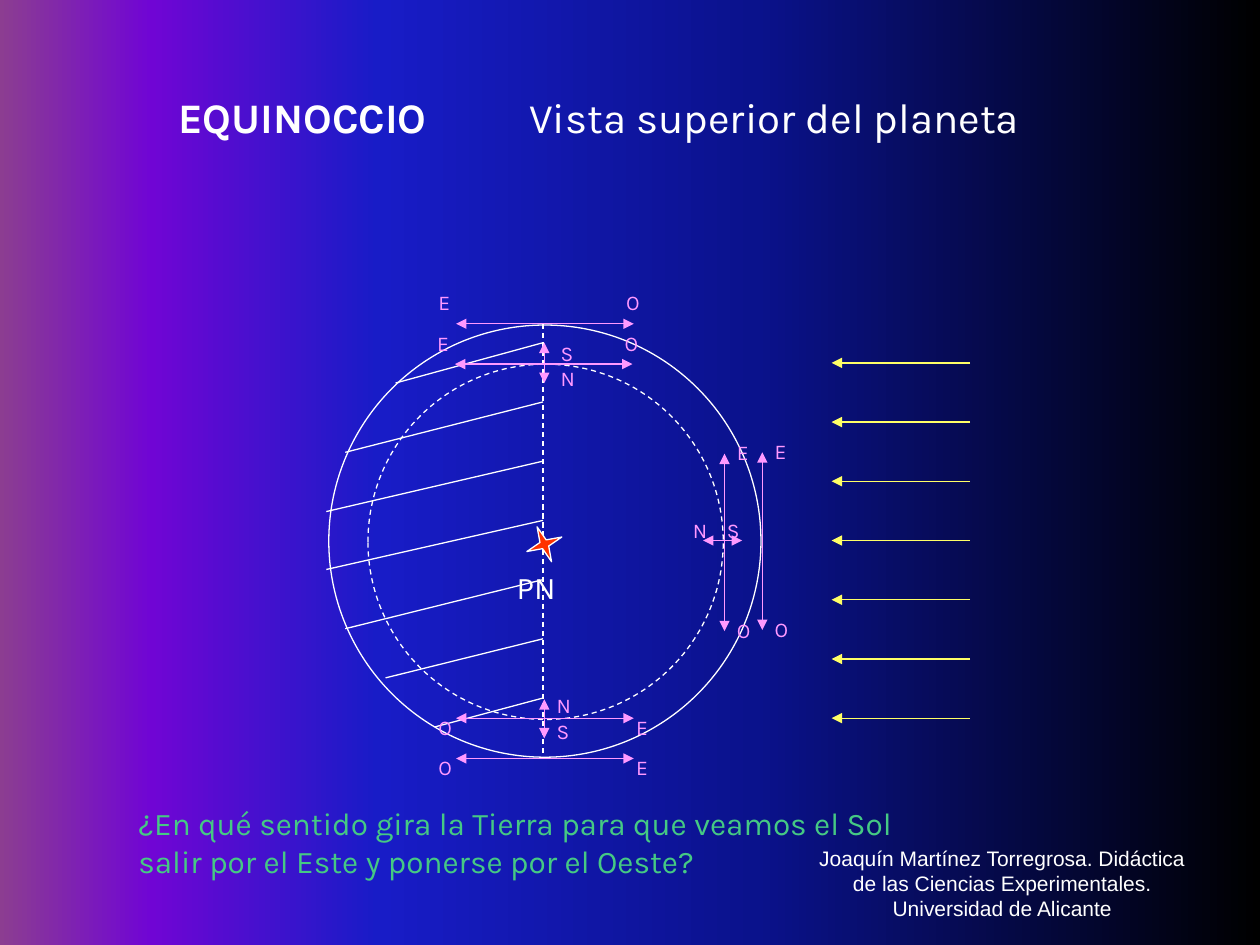
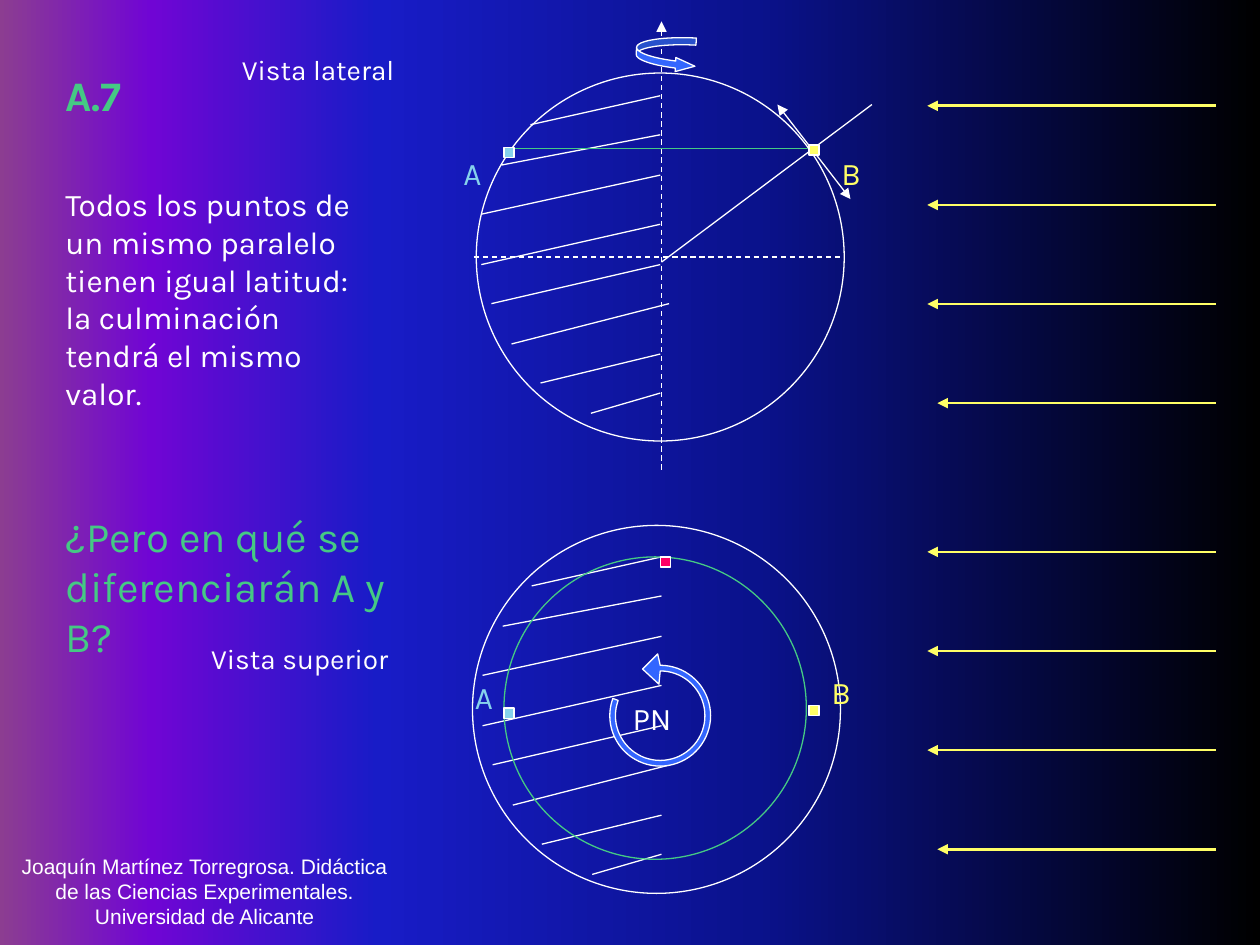
from math import cos, radians, sin

from lxml import etree
from pptx import Presentation
from pptx.dml.color import RGBColor
from pptx.enum.dml import MSO_LINE
from pptx.enum.shapes import MSO_CONNECTOR, MSO_SHAPE
from pptx.enum.text import MSO_ANCHOR, MSO_AUTO_SIZE, PP_ALIGN
from pptx.oxml.ns import qn
from pptx.util import Inches, Pt

LEFT, CENTER = PP_ALIGN.LEFT, PP_ALIGN.CENTER
TOP, BOTTOM = MSO_ANCHOR.TOP, MSO_ANCHOR.BOTTOM
OVAL, SQUARE = MSO_SHAPE.OVAL, MSO_SHAPE.RECTANGLE
STAR, CURVED_ARROW = MSO_SHAPE.STAR_4_POINT, MSO_SHAPE.CURVED_RIGHT_ARROW
STRAIGHT, DASH = MSO_CONNECTOR.STRAIGHT, MSO_LINE.DASH
NO_AUTOFIT = MSO_AUTO_SIZE.NONE

WHITE, YELLOW, PINK, GREEN = "FFFFFF", "FFFF66", "FF99FF", "45C984"
SKY, BLUE, RED, CRIMSON = "86D1EC", "3366FF", "FF3300", "FF0066"
SKY_STOPS = [(0, "000000"), (40, "0A128C"), (70, "181CC7"),
             (88, "7005D4"), (100, "8C3D91")]
CREDIT = ("Joaquín Martínez Torregrosa. Didáctica de las Ciencias "
          "Experimentales. Universidad de Alicante")

# Each mark is a letter and its offset from the start of the compass line.
MARKS_NOON_SIDE = [("E", 0, -0.16), ("O", 0, 1.25)]
MARKS_UPPER = [("E", -0.24, -0.32), ("O", 1.25, -0.32)]
MARKS_LOWER = [("O", -0.24, -0.08), ("E", 1.33, -0.08)]

# Each stroke is start x, start y, reach to the left and drop.
EQUINOX_STROKES = [
    (0, 0.47 * row, reach, drop) for row, (reach, drop) in enumerate(
        [(1.17, 0.32), (1.57, 0.4), (1.72, 0.4), (1.72, 0.39),
         (1.57, 0.39), (1.25, 0.31), (0.86, 0.23)])]
NIGHT_STROKES = [
    (0, 0, 1.03, 0.23), (0, 0.31, 1.26, 0.24), (0, 0.63, 1.42, 0.31),
    (0, 1.02, 1.42, 0.32), (0, 1.34, 1.34, 0.31), (0.07, 1.65, 1.25, 0.32),
    (0, 2.05, 0.95, 0.23), (0, 2.36, 0.55, 0.16)]


def rgb(value):
    return RGBColor.from_string(value)


def inches(values):
    return [Inches(value) for value in values]


def paint_background(master):
    """Give every slide the horizontal night-to-dawn gradient."""
    fill = master.background.fill
    fill.gradient()
    fill.gradient_angle = 180
    stops = master.element.find(".//" + qn("a:gsLst"))
    for stop in list(stops):
        stops.remove(stop)
    for position, color in SKY_STOPS:
        stop = etree.SubElement(stops, qn("a:gs"), pos=str(position * 1000))
        etree.SubElement(stop, qn("a:srgbClr"), val=color)


def write(shape, text, color, size, bold=False, font="Karla", align=LEFT,
          anchor=TOP, insets=(0.1, 0.05)):
    frame = shape.text_frame
    side, edge = inches(insets)
    frame_format = dict(word_wrap=True, auto_size=NO_AUTOFIT,
                        vertical_anchor=anchor, margin_left=side,
                        margin_right=side, margin_top=edge,
                        margin_bottom=edge, text=text)
    for name, value in frame_format.items():
        setattr(frame, name, value)
    paragraph = frame.paragraphs[0]
    paragraph.alignment = align
    run_font = paragraph.runs[0].font
    for name, value in dict(name=font, size=Pt(size), bold=bold).items():
        setattr(run_font, name, value)
    run_font.color.rgb = rgb(color)


def add_text(slide, box, text, color, size, **formats):
    write(slide.shapes.add_textbox(*inches(box)), text, color, size, **formats)


def add_title(slide, box, text, color, align):
    title = slide.shapes.title
    for name, value in zip(("left", "top", "width", "height"), inches(box)):
        setattr(title, name, value)
    write(title, text, color, 24, bold=True, align=align)


def add_credit(slide, x, y):
    add_text(slide, (x, y, 3.17, 0.5), CREDIT, WHITE, 12, font="Arial",
             align=CENTER, anchor=BOTTOM)


def add_pole_label(slide, x, y):
    add_text(slide, (x, y, 0.42, 0.32), "PN", WHITE, 18, insets=(0.02, 0.01))


def style(shape, fill=None, line=WHITE, dash=None):
    shape.shadow.inherit = False
    if fill:
        shape.fill.solid()
        shape.fill.fore_color.rgb = rgb(fill)
    else:
        shape.fill.background()
    shape.line.color.rgb = rgb(line)
    shape.line.width = Pt(0.75)
    shape.line.dash_style = dash


def add_figure(slide, kind, box, rotation=0, adjustments=(), **formats):
    figure = slide.shapes.add_shape(kind, *inches(box))
    figure.rotation = rotation
    for index, value in enumerate(adjustments):
        figure.adjustments[index] = value
    style(figure, **formats)


def add_circle(slide, x, y, size, **formats):
    add_figure(slide, OVAL, (x, y, size, size), **formats)


def add_line(slide, start, end, color=WHITE, width=0.75, dash=None, arrows=()):
    """Arrows may hold headEnd (at the start) and tailEnd (at the end)."""
    line = slide.shapes.add_connector(STRAIGHT, *inches(start + end))
    line.line.color.rgb = rgb(color)
    line.line.width = Pt(width)
    line.line.dash_style = dash
    properties = line.element.spPr
    for arrow in arrows:
        etree.SubElement(properties.find(qn("a:ln")), qn("a:" + arrow),
                         type="triangle")
    etree.SubElement(properties, qn("a:effectLst"))


def add_night(slide, x, y, strokes):
    """Hatch the dark half of the globe leftwards from its axis."""
    for start, depth, reach, drop in strokes:
        add_line(slide, (x + start, y + depth),
                 (x + start - reach, y + depth + drop))


def add_sun_rays(slide, box, count, width, last_gap=0):
    x, y, length, height = box
    for ray in range(count):
        ray_y = y + height * ray / (count - 1)
        gap = last_gap if ray == count - 1 else 0
        add_line(slide, (x + length, ray_y), (x + gap, ray_y), YELLOW, width,
                 arrows=["tailEnd"])


def add_compass_line(slide, box, marks):
    x, y, width, height = box
    add_line(slide, (x, y), (x + width, y + height), PINK,
             arrows=["headEnd", "tailEnd"])
    for letter, dx, dy in marks:
        add_text(slide, (x + dx, y + dy, 0.39, 0.39), letter, PINK, 12)


def add_equinox_globe(slide, x, y):
    add_circle(slide, x, y, 3.43)
    add_line(slide, (x + 1.7, y - 0.01), (x + 1.7, y + 3.44), dash=DASH)
    add_night(slide, x + 1.7, y + 0.14, EQUINOX_STROKES)
    add_circle(slide, x + 0.31, y + 0.31, 2.82, dash=DASH)
    for dx, dy, width, height, marks in [
            (1.01, 3.44, 1.41, 0, MARKS_LOWER),
            (1.01, 3.12, 1.41, 0, MARKS_LOWER),
            (1.01, -0.01, 1.41, 0, MARKS_UPPER),
            (1, 0.31, 1.41, 0, MARKS_UPPER),
            (3.44, 1.01, 0, 1.41, MARKS_NOON_SIDE),
            (3.14, 1.02, 0, 1.41, MARKS_NOON_SIDE),
            (1.71, 2.97, 0, 0.31, [("N", 0, -0.1), ("S", 0, 0.1)]),
            (1.71, 0.14, 0, 0.32, [("S", 0.03, -0.07), ("N", 0.03, 0.13)]),
            (2.97, 1.71, 0.31, 0, [("N", -0.18, -0.23), ("S", 0.09, -0.23)])]:
        add_compass_line(slide, (x + dx, y + dy, width, height), marks)
    add_pole_label(slide, x + 1.47, y + 1.92)
    add_figure(slide, STAR, (x + 1.56, y + 1.59, 0.3, 0.3), rotation=67.5,
               adjustments=[0.125], fill=RED)


def add_place(slide, x, y, color, letter=None, dx=0, dy=0):
    """Mark a place on the globe, with its letter at an offset."""
    add_figure(slide, SQUARE, (x, y, 0.08, 0.08), fill=color)
    if letter:
        add_text(slide, (x + dx, y + dy, 0.42, 0.4), letter, color, 18)


def add_spin_arrow(slide, x, y):
    """Draw the counterclockwise turn around the pole at x, y."""
    def arc(radius, angles):
        return [(x + radius * cos(radians(a)), y + radius * sin(radians(a)))
                for a in angles]

    outline = arc(0.355, range(-90, 201, 5)) + arc(0.4, range(200, -91, -5))
    outline += [(x - 0.02, y - 0.49), (x - 0.14, y - 0.37),
                (x - 0.01, y - 0.25)]
    points = [inches(point) for point in outline]
    builder = slide.shapes.build_freeform(*points[0])
    builder.add_line_segments(points[1:], close=True)
    style(builder.convert_to_shape(), fill=BLUE)


def add_side_view(slide, x, y):
    add_circle(slide, x, y, 2.92)
    add_line(slide, (x + 1.47, y - 0.41), (x + 1.47, y + 3.16), dash=DASH,
             arrows=["headEnd"])
    add_line(slide, (x - 0.02, y + 1.46), (x + 2.9, y + 1.46), dash=DASH)
    add_night(slide, x + 1.46, y + 0.18, NIGHT_STROKES)
    add_line(slide, (x + 0.27, y + 0.6), (x + 2.67, y + 0.6), GREEN)
    add_figure(slide, CURVED_ARROW, (x + 1.27, y - 0.29, 0.47, 0.28),
               rotation=3, adjustments=[0.2, 0.4, 0.551], fill=BLUE)
    add_line(slide, (x + 1.47, y + 1.5), (x + 3.14, y + 0.25))
    add_line(slide, (x + 2.39, y + 0.25), (x + 2.97, y + 1),
             arrows=["headEnd", "tailEnd"])
    add_place(slide, x + 0.22, y + 0.59, SKY, "A", -0.42, 0)
    add_place(slide, x + 2.64, y + 0.57, YELLOW, "B", 0.16, 0.02)


def add_top_view(slide, x, y):
    add_night(slide, x + 1.5, y + 0.25, NIGHT_STROKES)
    add_circle(slide, x, y, 2.92)
    add_circle(slide, x + 0.25, y + 0.25, 2.4, line=GREEN)
    add_place(slide, x + 0.25, y + 1.45, SKY, "A", -0.33, -0.29)
    add_place(slide, x + 2.67, y + 1.43, YELLOW, "B", 0.08, -0.31)
    add_place(slide, x + 1.49, y + 0.25, CRIMSON)
    add_spin_arrow(slide, x + 1.49, y + 1.51)
    add_pole_label(slide, x + 1.25, y + 1.37)


def build_equinox(slide):
    add_title(slide, (0.98, 0.68, 2.84, 0.63), "EQUINOCCIO", WHITE, CENTER)
    add_text(slide, (3.9, 0.68, 4.49, 0.71), "Vista superior del planeta",
             WHITE, 24, align=CENTER)
    add_equinox_globe(slide, 2.61, 2.58)
    add_sun_rays(slide, (6.6, 2.88, 1.1, 2.82), 7, 0.75)
    add_text(slide, (1, 6.33, 6.58, 0.7),
             "¿En qué sentido gira la Tierra para que veamos el Sol salir por "
             "el Este y ponerse por el Oeste?", GREEN, 18)
    add_credit(slide, 6.37, 6.86)


def build_parallel(slide):
    add_title(slide, (0.42, 0.5, 0.83, 0.5), "A.7", GREEN, LEFT)
    for box, caption in [((1.5, 0.33, 2.05, 0.49), "Vista lateral"),
                         ((1.25, 5, 2.26, 0.49), "Vista superior")]:
        add_text(slide, box, caption, WHITE, 16, align=CENTER,
                 insets=(0.18, 0.09))
    add_text(slide, (0.42, 1.42, 2.58, 1.6),
             "Todos los puntos de un mismo paralelo tienen igual latitud: la "
             "culminación tendrá el mismo valor.", WHITE, 18)
    add_text(slide, (0.42, 4, 3.17, 0.9),
             "¿Pero en qué se diferenciarán A y B?", GREEN, 24)
    add_side_view(slide, 3.78, 0.58)
    add_top_view(slide, 3.75, 4.17)
    for y in (0.84, 4.38):
        add_sun_rays(slide, (7.36, y, 2.29, 2.36), 4, 1.5, last_gap=0.08)
    add_credit(slide, 0.04, 6.92)


def main():
    deck = Presentation()
    deck.slide_width, deck.slide_height = inches((10, 7.5))
    paint_background(deck.slide_master)
    title_only = deck.slide_layouts.get_by_name("Title Only")
    for build in (build_equinox, build_parallel):
        build(deck.slides.add_slide(title_only))
    deck.save("out.pptx")


if __name__ == "__main__":
    main()
